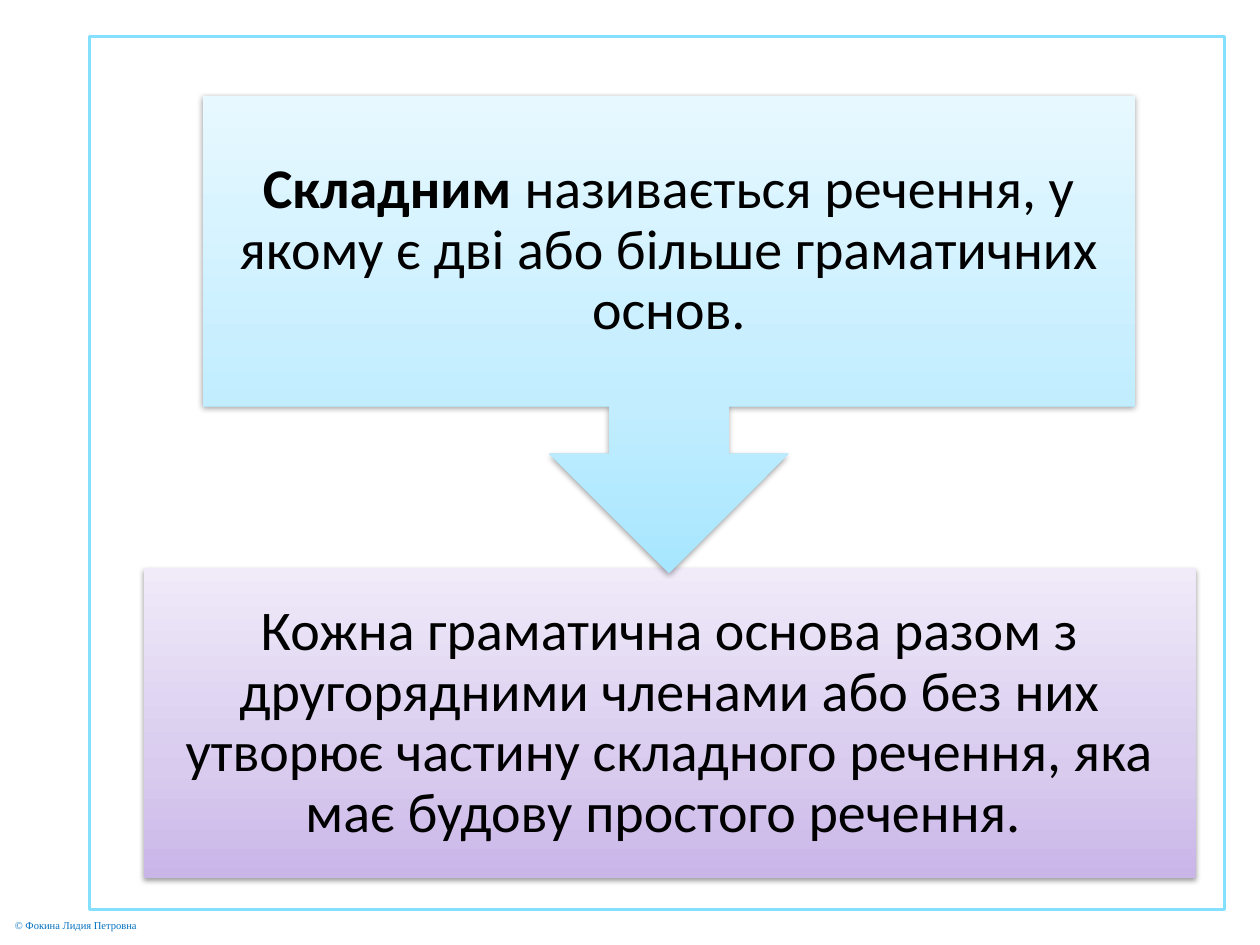
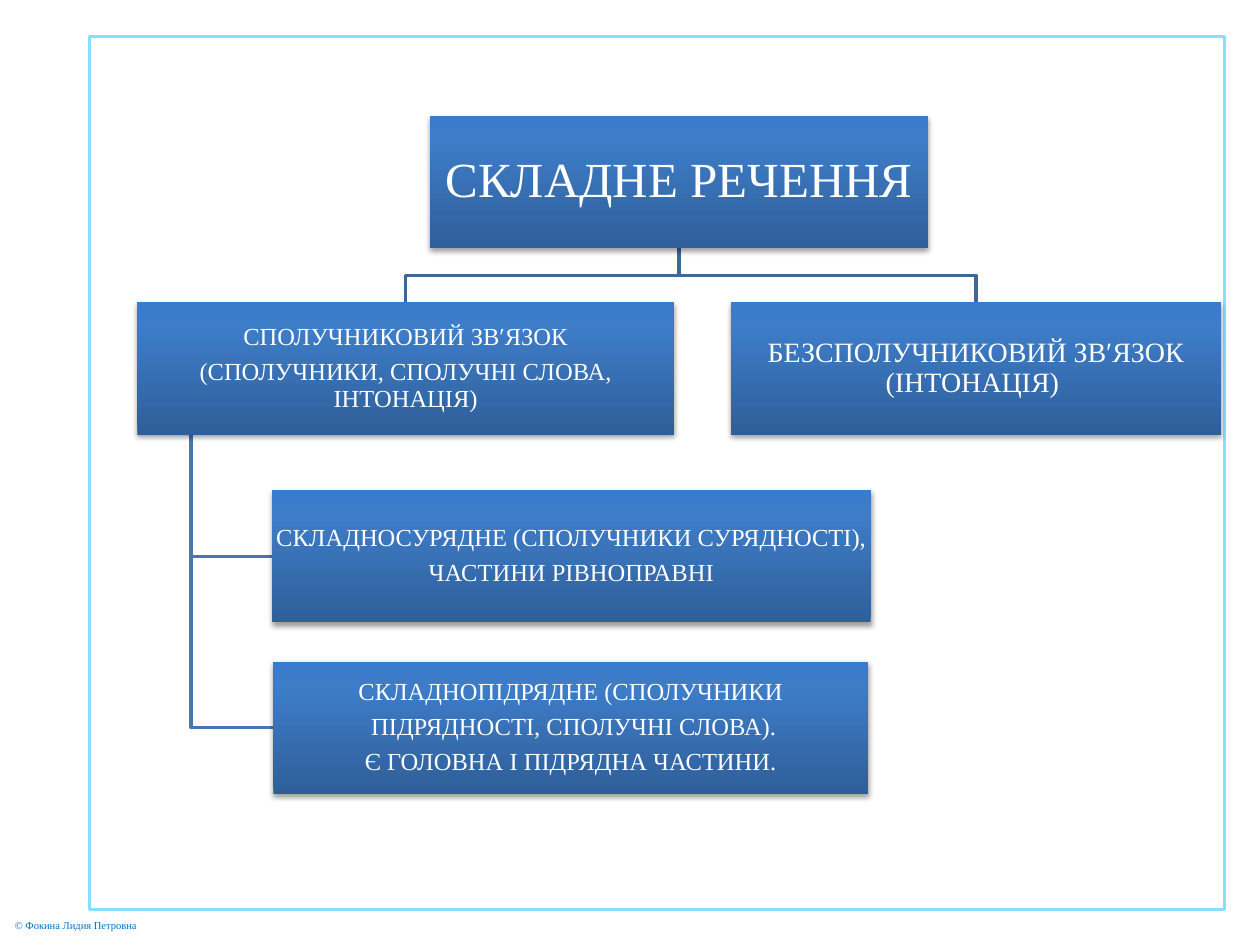
from collections import namedtuple

from lxml.etree import SubElement
from pptx import Presentation
from pptx.dml.color import RGBColor
from pptx.enum.shapes import MSO_SHAPE as SHAPE
from pptx.enum.text import MSO_ANCHOR as ANCHOR, MSO_AUTO_SIZE as AUTO_SIZE, PP_ALIGN as ALIGN
from pptx.oxml import parse_xml
from pptx.oxml.ns import nsdecls, qn
from pptx.util import Inches, Pt

COLORS = {
    "paper": "FFFFFF", "frame": "85DFFF", "credit": "0070C0",
    "dark_text": "000000", "light_text": "FFFFFF", "shadow": "000000",
    "branch": "3F6797", "twig": "4875AC",
}
GRADIENTS = {
    "sky": [(0, "A7E6FF"), (35, "C1EDFF"), (100, "E7F8FF")],
    "lilac": [(0, "C9B5E8"), (35, "D8CBEE"), (100, "F0EAF9")],
    "blue": [(0, "2F5F99"), (80, "3D7CC7"), (100, "3A7CCB")],
}
SERIF = "Times New Roman"
SANS = "Calibri"
NODE_HEIGHT = 1.05

Box = namedtuple("Box", "left top width height")
Style = namedtuple("Style", "gradient font size color inset")
FRAME = Box(0.71, 0.29, 9.01, 6.93)


def color(name):
    return RGBColor.from_string(COLORS[name])


def within(area, left, top, width, height):
    return Box(area.left + left, area.top + top, width, height)


def emu(box):
    return [Inches(length) for length in box]


def add_run(paragraph, text, font, size, color_name, bold=False):
    run = paragraph.add_run()
    run.text = text
    run.font.name = font
    run.font.size = Pt(size)
    run.font.bold = bold
    run.font.color.rgb = color(color_name)


def shade(shape, stops):
    stop_xml = "".join(
        f'<a:gs pos="{pos * 1000}"><a:srgbClr val="{value}"/></a:gs>' for pos, value in stops)
    properties = shape._element.spPr
    properties.insert(2, parse_xml(
        f'<a:gradFill {nsdecls("a")} rotWithShape="1"><a:gsLst>{stop_xml}</a:gsLst>'
        '<a:lin ang="16200000" scaled="0"/></a:gradFill>'))
    properties.append(parse_xml(
        f'<a:effectLst {nsdecls("a")}><a:outerShdw blurRad="40000" dist="20000" dir="5400000" '
        f'rotWithShape="0"><a:srgbClr val="{COLORS["shadow"]}"><a:alpha val="38000"/>'
        '</a:srgbClr></a:outerShdw></a:effectLst>'))


def add_panel(slide, box, paragraphs, style, preset=SHAPE.RECTANGLE):
    panel = slide.shapes.add_shape(preset, *emu(box))
    panel.line.fill.background()
    shade(panel, GRADIENTS[style.gradient])
    frame = panel.text_frame
    frame.word_wrap = True
    frame.vertical_anchor = ANCHOR.MIDDLE
    frame.margin_left = frame.margin_right = Inches(style.inset)
    frame.margin_top = frame.margin_bottom = Inches(style.inset)
    for index, runs in enumerate(paragraphs):
        paragraph = frame.add_paragraph() if index else frame.paragraphs[0]
        paragraph.alignment = ALIGN.CENTER
        paragraph.line_spacing = 0.9
        paragraph.space_after = Pt(style.size * 0.35)
        for text, bold in runs:
            add_run(paragraph, text, style.font, style.size, style.color, bold)


def add_bent_line(slide, points, color_name):
    start, *rest = [(Inches(x), Inches(y)) for x, y in points]
    builder = slide.shapes.build_freeform(*start)
    builder.add_line_segments(rest, close=False)
    bent_line = builder.convert_to_shape()
    bent_line.shadow.inherit = False
    bent_line.fill.background()
    bent_line.line.color.rgb = color(color_name)
    bent_line.line.width = Pt(2)


def decorate_master(prs, slide):
    border = slide.shapes.add_shape(SHAPE.RECTANGLE, *emu(FRAME))
    border.shadow.inherit = False
    border.fill.solid()
    border.fill.fore_color.rgb = color("paper")
    paper = border._element.spPr.find(qn("a:solidFill"))[0]
    SubElement(paper, qn("a:alpha"), val="70000")
    border.line.color.rgb = color("frame")
    border.line.width = Pt(2)

    credit = slide.shapes.add_textbox(*emu(Box(0.02, 7.24, 1.2, 0.2)))
    credit.text_frame.word_wrap = False
    credit.text_frame.auto_size = AUTO_SIZE.SHAPE_TO_FIT_TEXT
    credit.text_frame.vertical_anchor = ANCHOR.MIDDLE
    add_run(credit.text_frame.paragraphs[0], "© Фокина Лидия Петровна", SERIF, 6, "credit")

    for part in (border, credit):
        prs.slide_master.shapes._spTree.append(part._element)


def build_definition(slide, area):
    lilac = Style("lilac", SANS, 32, "dark_text", 0.25)
    add_panel(slide, within(area, 0.43, 4.22, 8.35, 2.46), [[
        ("Кожна граматична основа разом з другорядними членами або без них утворює "
         "частину складного речення, яка має будову простого речення. ", False)]], lilac)
    add_panel(slide, within(area, 0.9, 0.47, 7.4, 3.79), [[
        ("Складним", True),
        (" називається речення, у якому є дві або більше граматичних основ.", False)]],
        lilac._replace(gradient="sky"), SHAPE.DOWN_ARROW_CALLOUT)


def build_scheme(slide, area):
    def node(left, top, width):
        return within(area, left, top, width, NODE_HEIGHT)

    sentence = node(2.7, 0.63, 3.96)
    conjunctive = node(0.38, 2.11, 4.26)
    asyndetic = node(5.09, 2.11, 3.89)
    coordinate = node(1.45, 3.6, 4.75)
    subordinate = node(1.46, 4.96, 4.72)

    trunk_x = sentence.left + sentence.width / 2
    trunk_y = sentence.top + NODE_HEIGHT
    for kind in (asyndetic, conjunctive):
        kind_x = kind.left + kind.width / 2
        middle_y = (trunk_y + kind.top) / 2
        add_bent_line(slide, [(trunk_x, trunk_y), (trunk_x, middle_y),
                              (kind_x, middle_y), (kind_x, kind.top)], "branch")

    rail_x = conjunctive.left + conjunctive.width / 10
    for subtype in (subordinate, coordinate):
        subtype_y = subtype.top + NODE_HEIGHT / 2
        add_bent_line(slide, [(rail_x, conjunctive.top + NODE_HEIGHT), (rail_x, subtype_y),
                              (subtype.left, subtype_y)], "twig")

    labels = [
        (sentence, 28, ["СКЛАДНЕ РЕЧЕННЯ"]),
        (conjunctive, 14, ["СПОЛУЧНИКОВИЙ ЗВ′ЯЗОК",
                           "(СПОЛУЧНИКИ, СПОЛУЧНІ СЛОВА, ІНТОНАЦІЯ)"]),
        (coordinate, 14, ["СКЛАДНОСУРЯДНЕ (СПОЛУЧНИКИ СУРЯДНОСТІ), ",
                          "ЧАСТИНИ РІВНОПРАВНІ"]),
        (subordinate, 14, ["СКЛАДНОПІДРЯДНЕ (СПОЛУЧНИКИ",
                           " ПІДРЯДНОСТІ, СПОЛУЧНІ СЛОВА).",
                           "Є ГОЛОВНА І ПІДРЯДНА ЧАСТИНИ."]),
        (asyndetic, 16, ["БЕЗСПОЛУЧНИКОВИЙ ЗВ′ЯЗОК (ІНТОНАЦІЯ) "]),
    ]
    for box, size, lines in labels:
        add_panel(slide, box, [[(line, False)] for line in lines],
                  Style("blue", SERIF, size, "light_text", 0.01))


def main():
    prs = Presentation()
    prs.slide_width, prs.slide_height = Inches(10), Inches(7.5)
    blank = prs.slide_layouts[6]
    definition, scheme = [prs.slides.add_slide(blank) for _ in range(2)]
    decorate_master(prs, definition)
    build_definition(definition, FRAME)
    build_scheme(scheme, FRAME)
    prs.save("out.pptx")


if __name__ == "__main__":
    main()
